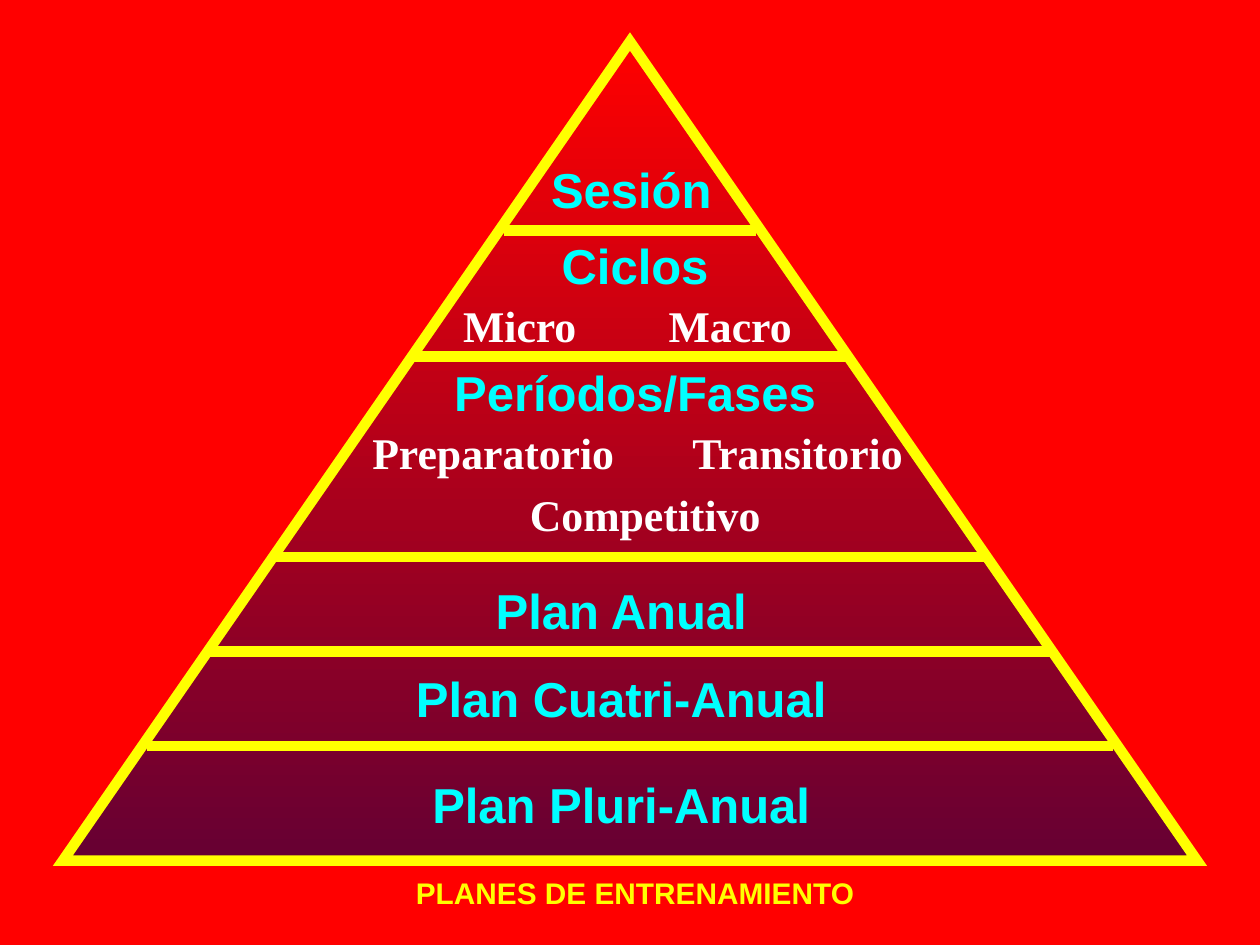
from lxml import etree
from pptx import Presentation, util as u
from pptx.dml.color import RGBColor
from pptx.enum import shapes, text
from pptx.oxml import ns

COLORS = {"background": "FF0000", "base": "660033", "edge": "FFFF00",
          "level": "00FFFF", "detail": "FFFFFF"}
CENTER = 5
DIVIDERS = [(1.83, 2), (2.83, 3.5), (4.42, 5.66), (5.17, 6.66), (5.92, 7.66)]
LEVELS = [("Ciclos", 4.25, 1.82, 1.58), ("Períodos/Fases", 3.33, 2.83, 3.42)]
SPACED_LEVELS = [("Sesión", 4.17, 1.08, 1.58), ("Plan Anual", 2.67, 4.42, 4.42),
                 ("Plan Cuatri-Anual", 2.67, 5.12, 4.42),
                 ("Plan Pluri-Anual", 2.67, 5.96, 4.42)]
DETAILS = [("Micro", 3.5, 2.32, 1.25), ("Macro", 5.17, 2.32, 1.25),
           ("Preparatorio", 2.83, 3.33, 2.17), ("Transitorio", 5.33, 3.33, 2),
           ("Competitivo", 4.08, 3.82, 2.08)]


def rgb(name):
    return RGBColor.from_string(COLORS[name])


def style_edge(line):
    line.color.rgb = rgb("edge")
    line.width = u.Pt(6)


def add_pyramid(slide):
    pyramid = slide.shapes.add_shape(
        shapes.MSO_SHAPE.ISOSCELES_TRIANGLE,
        u.Inches(0.5), u.Inches(0.33), u.Inches(9), u.Inches(6.5))
    pyramid.shadow.inherit = False
    pyramid.fill.gradient()
    pyramid.fill.gradient_angle = 270
    for stop, position, name in zip(pyramid.fill.gradient_stops, (0, 1),
                                    ("background", "base")):
        stop.position = position
        stop.color.rgb = rgb(name)
    style_edge(pyramid.line)
    outline = pyramid.element.spPr.find(ns.qn("a:ln"))
    etree.SubElement(outline, ns.qn("a:miter"), lim="800000")


def add_divider(slide, y, width):
    divider = slide.shapes.add_connector(
        shapes.MSO_CONNECTOR.STRAIGHT,
        u.Inches(CENTER - width / 2), u.Inches(y),
        u.Inches(CENTER + width / 2), u.Inches(y))
    style_edge(divider.line)
    etree.SubElement(divider.element.spPr, ns.qn("a:effectLst"))


def add_label(slide, wording, left, top, width, height, size, color, face="Arial"):
    label = slide.shapes.add_textbox(
        u.Inches(left), u.Inches(top), u.Inches(width), u.Inches(height))
    frame = label.text_frame
    frame.word_wrap = True
    paragraph = frame.paragraphs[0]
    paragraph.text = wording
    paragraph.alignment = text.PP_ALIGN.CENTER
    paragraph.font.name = face
    paragraph.font.size = u.Pt(size)
    paragraph.font.bold = True
    paragraph.font.color.rgb = rgb(color)
    return frame


def add_spaced_level(slide, wording, left, top, width):
    frame = add_label(slide, wording, left, top, width, 0.71, 28, "level")
    frame.paragraphs[0].line_spacing = 1.3
    frame.margin_left, frame.margin_right = u.Inches(0.15), u.Inches(0.05)


def add_caption(slide):
    frame = add_label(slide, "PLANES DE ENTRENAMIENTO",
                      3.08, 6.92, 3.92, 0.33, 17, "edge")
    frame.word_wrap = False
    frame.vertical_anchor = text.MSO_ANCHOR.MIDDLE


def main():
    deck = Presentation()
    deck.slide_width, deck.slide_height = u.Inches(10), u.Inches(7.5)
    slide = deck.slides.add_slide(deck.slide_layouts[6])
    slide.background.fill.solid()
    slide.background.fill.fore_color.rgb = rgb("background")
    add_pyramid(slide)
    for y, width in DIVIDERS:
        add_divider(slide, y, width)
    for level in SPACED_LEVELS:
        add_spaced_level(slide, *level)
    for level in LEVELS:
        add_label(slide, *level, 0.57, 28, "level")
    for detail in DETAILS:
        add_label(slide, *detail, 0.52, 25, "detail", "Times New Roman")
    add_caption(slide)
    deck.save("out.pptx")


if __name__ == "__main__":
    main()
